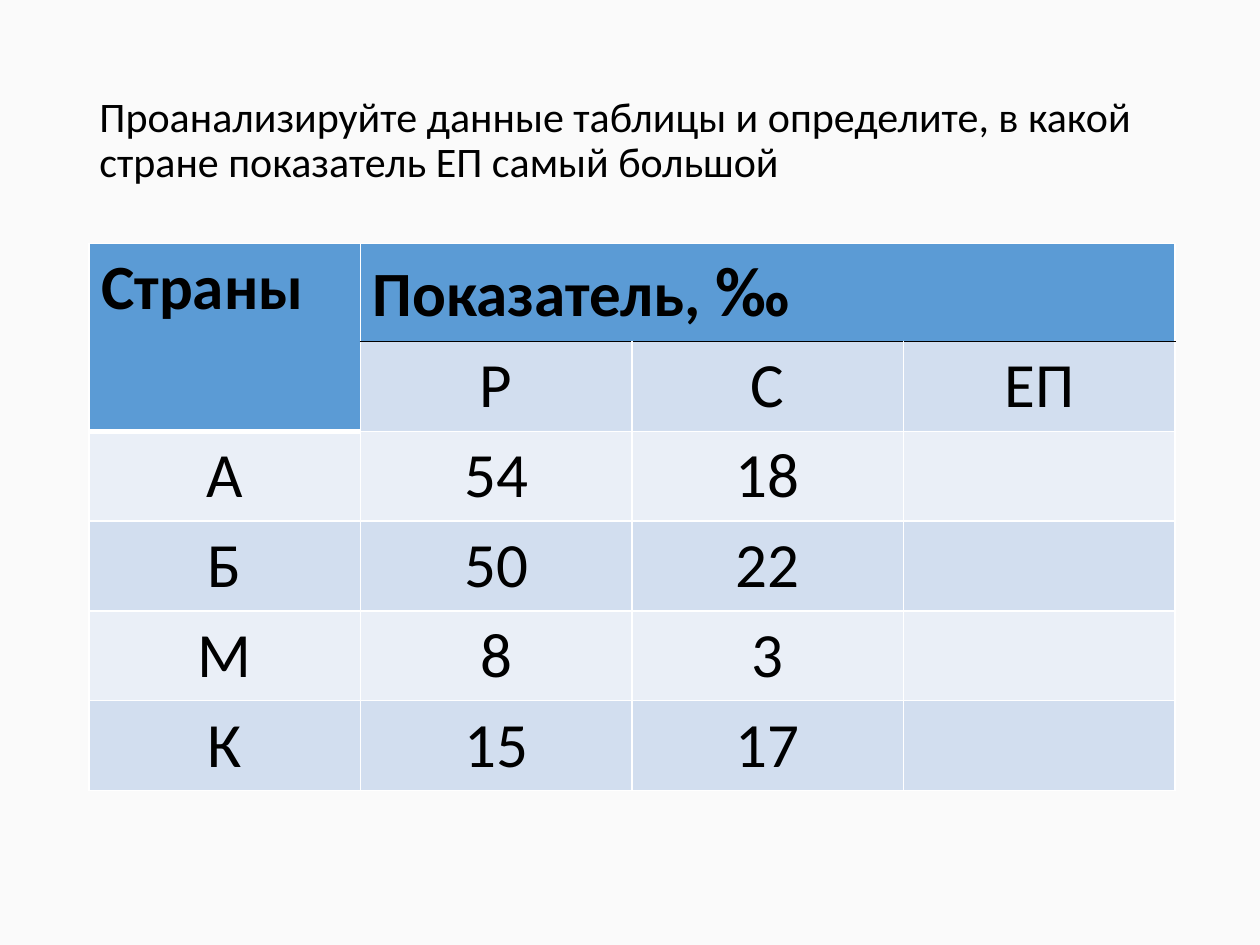
from lxml import etree
from pptx import Presentation
from pptx.dml.color import RGBColor
from pptx.enum.text import MSO_ANCHOR, PP_ALIGN
from pptx.oxml.ns import qn
from pptx.util import Cm, Pt

LEFT = PP_ALIGN.LEFT
CENTER = PP_ALIGN.CENTER
MIDDLE = MSO_ANCHOR.MIDDLE
TITLE_ONLY = 5

BLACK = "000000"
WHITE = "FFFFFF"
HEADER = "5B9BD5"
BANDS = ("EAEFF7", "D2DEEF")

ROWS = (
    ("Страны", "Показатель, ", "", ""),
    ("", "Р", "С", "ЕП"),
    ("А", "54", "18", ""),
    ("Б", "50", "22", ""),
    ("М", "8", "3", ""),
    ("К", "15", "17", ""),
)


def rgb(value):
    return RGBColor.from_string(value)


class Page:
    font_name = "Calibri"

    def __init__(self, deck, background):
        self.slide = deck.slides.add_slide(deck.slide_layouts[TITLE_ONLY])
        fill = self.slide.background.fill
        fill.solid()
        fill.fore_color.rgb = rgb(background)

    def style(self, paragraph, size, align, bold=False):
        paragraph.alignment = align
        font = paragraph.font
        font.name = self.font_name
        font.size = Pt(size)
        font.bold = bold
        font.color.rgb = rgb(BLACK)

    def title(self, text, left, top, width, height):
        box = self.slide.shapes.title
        box.left, box.top = Cm(left), Cm(top)
        box.width, box.height = Cm(width), Cm(height)
        frame = box.text_frame
        frame.text = text
        frame.word_wrap = True
        frame.vertical_anchor = MIDDLE
        paragraph = frame.paragraphs[0]
        paragraph.line_spacing = 0.9
        self.style(paragraph, 24, LEFT)

    def table(self, rows, left, top, width, heights):
        frame = self.slide.shapes.add_table(
            len(rows), len(rows[0]), Cm(left), Cm(top), Cm(width), Cm(sum(heights)))
        table = frame.table
        table.first_row = table.horz_banding = False
        for row, height in zip(table.rows, heights):
            row.height = Cm(height)
        for row_index, values in enumerate(rows):
            for column_index, value in enumerate(values):
                in_header = row_index == 0 or (row_index, column_index) == (1, 0)
                cell = table.cell(row_index, column_index)
                cell.text = value
                self.style(cell.text_frame.paragraphs[0], 36,
                           LEFT if in_header else CENTER, in_header)
                cell.fill.solid()
                cell.fill.fore_color.rgb = rgb(HEADER if in_header else BANDS[row_index % 2])
                self.borders(cell, row_index, column_index)
        return table

    def borders(self, cell, row_index, column_index):
        lines = {side: (WHITE, 1) for side in ("lnL", "lnR", "lnT", "lnB")}
        if column_index and row_index < 2:
            lines["lnT" if row_index else "lnB"] = (BLACK, 1)
        if column_index == 0 and row_index in (0, 1):
            lines["lnB"] = (WHITE, 3)
        if column_index == 0 and row_index == 2:
            lines["lnT"] = (WHITE, 3)
        properties = cell._tc.get_or_add_tcPr()
        for position, (side, (color, weight)) in enumerate(lines.items()):
            line = etree.Element(qn(f"a:{side}"), w=str(Pt(weight)))
            fill = etree.SubElement(line, qn("a:solidFill"))
            etree.SubElement(fill, qn("a:srgbClr"), val=color)
            properties.insert(position, line)


def main():
    deck = Presentation()
    deck.slide_width, deck.slide_height = Cm(25.4), Cm(19.05)
    page = Page(deck, "FAFAFA")
    page.title("Проанализируйте данные таблицы и определите, в какой стране "
               "показатель ЕП самый большой", 1.75, 1.01, 21.9, 3.68)
    table = page.table(ROWS, 1.79, 4.91, 21.9, [1.97] + [1.81] * 5)
    table.cell(0, 0).merge(table.cell(1, 0))
    table.cell(0, 1).merge(table.cell(0, 3))
    span = table.cell(0, 1).text_frame.paragraphs[0].add_run()
    span.text = "‰"
    span.font.size = Pt(40)
    deck.save("out.pptx")


if __name__ == "__main__":
    main()
